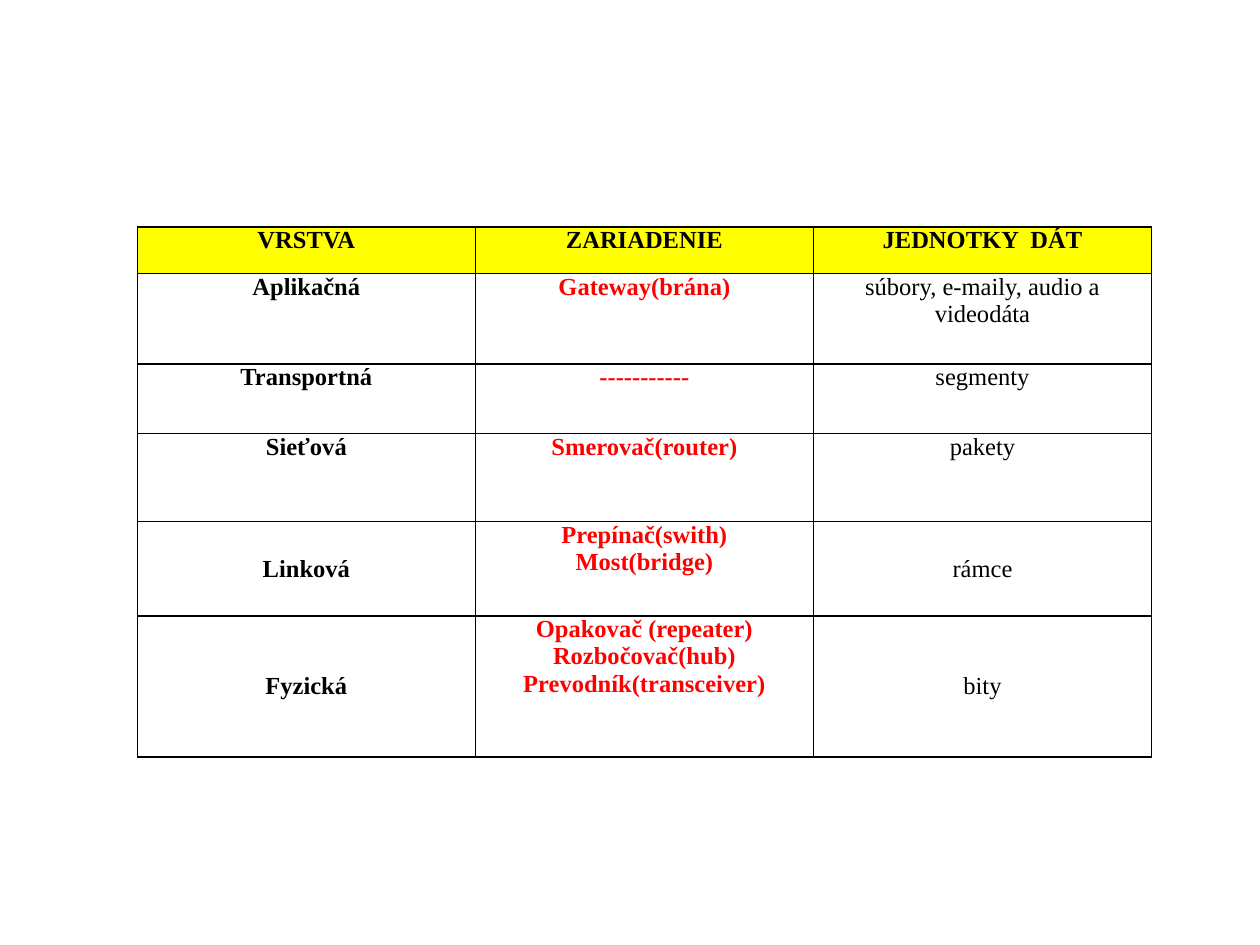
from dataclasses import dataclass

from lxml import etree
from pptx import Presentation
from pptx.dml.color import RGBColor
from pptx.enum.text import MSO_ANCHOR, PP_ALIGN
from pptx.oxml.ns import qn
from pptx.util import Inches, Pt

CENTER = PP_ALIGN.CENTER
TOP, MIDDLE = MSO_ANCHOR.TOP, MSO_ANCHOR.MIDDLE


@dataclass(frozen=True)
class Theme:
    font: str = "Times New Roman"
    size: int = 14
    text: str = "000000"
    device: str = "FF0000"
    header: str = "FFFF00"
    border: str = "000000"
    border_pt: int = 1


THEME = Theme()

HEADER = ("VRSTVA", "ZARIADENIE", "JEDNOTKY  DÁT")
# Layer, devices, data units, row height, anchor of the outer columns
LAYERS = [
    ("Aplikačná", ["Gateway(brána)"], "súbory, e-maily, audio a videodáta", 0.72, TOP),
    ("Transportná", ["-----------"], "segmenty", 0.55, TOP),
    ("Sieťová", ["Smerovač(router)"], "pakety", 0.7, TOP),
    ("Linková", ["Prepínač(swith)", "Most(bridge)"], "rámce", 0.75, MIDDLE),
    ("Fyzická", ["Opakovač (repeater)", "Rozbočovač(hub)", "Prevodník(transceiver)"],
     "bity", 1.12, MIDDLE),
]
HEADER_HEIGHT = 0.37


def set_text(tf, lines, color=THEME.text, bold=True):
    """Write one centred paragraph per line."""
    for i, line in enumerate(lines):
        p = tf.paragraphs[0] if i == 0 else tf.add_paragraph()
        p.alignment = CENTER
        r = p.add_run()
        r.text = line
        r.font.name = THEME.font
        r.font.size = Pt(THEME.size)
        r.font.bold = bold
        r.font.color.rgb = RGBColor.from_string(color)


def set_borders(cell):
    """Draw all four cell edges; they must precede the fill in the XML."""
    tc_pr = cell._tc.get_or_add_tcPr()
    for i, side in enumerate(("a:lnL", "a:lnR", "a:lnT", "a:lnB")):
        ln = etree.Element(qn(side), w=str(Pt(THEME.border_pt)))
        fill = etree.SubElement(ln, qn("a:solidFill"))
        etree.SubElement(fill, qn("a:srgbClr"), val=THEME.border)
        tc_pr.insert(i, ln)


def format_cell(cell, lines, fill=None, anchor=TOP, **text_format):
    cell.margin_left = cell.margin_right = Inches(0.07)
    cell.margin_top = cell.margin_bottom = 0
    cell.vertical_anchor = anchor
    if fill:
        cell.fill.solid()
        cell.fill.fore_color.rgb = RGBColor.from_string(fill)
    else:
        cell.fill.background()
    set_borders(cell)
    set_text(cell.text_frame, lines, **text_format)


def add_layer_table(slide, left, top, width):
    heights = [HEADER_HEIGHT] + [layer[3] for layer in LAYERS]
    table = slide.shapes.add_table(
        len(heights), len(HEADER), Inches(left), Inches(top),
        Inches(width), Inches(sum(heights))).table
    table.first_row = table.horz_banding = False
    for row, height in zip(table.rows, heights):
        row.height = Inches(height)

    # Header row
    for col, title in enumerate(HEADER):
        format_cell(table.cell(0, col), [title], fill=THEME.header)

    # One row per network layer
    for row, (layer, devices, unit, _, anchor) in enumerate(LAYERS, start=1):
        format_cell(table.cell(row, 0), [layer], anchor=anchor)
        format_cell(table.cell(row, 1), devices, color=THEME.device)
        format_cell(table.cell(row, 2), [unit], anchor=anchor, bold=False)


def main():
    prs = Presentation()
    prs.slide_width, prs.slide_height = Inches(10), Inches(7.5)
    slide = prs.slides.add_slide(prs.slide_layouts[6])
    add_layer_table(slide, 1.09, 1.8, 8.05)
    prs.save("out.pptx")


if __name__ == "__main__":
    main()
